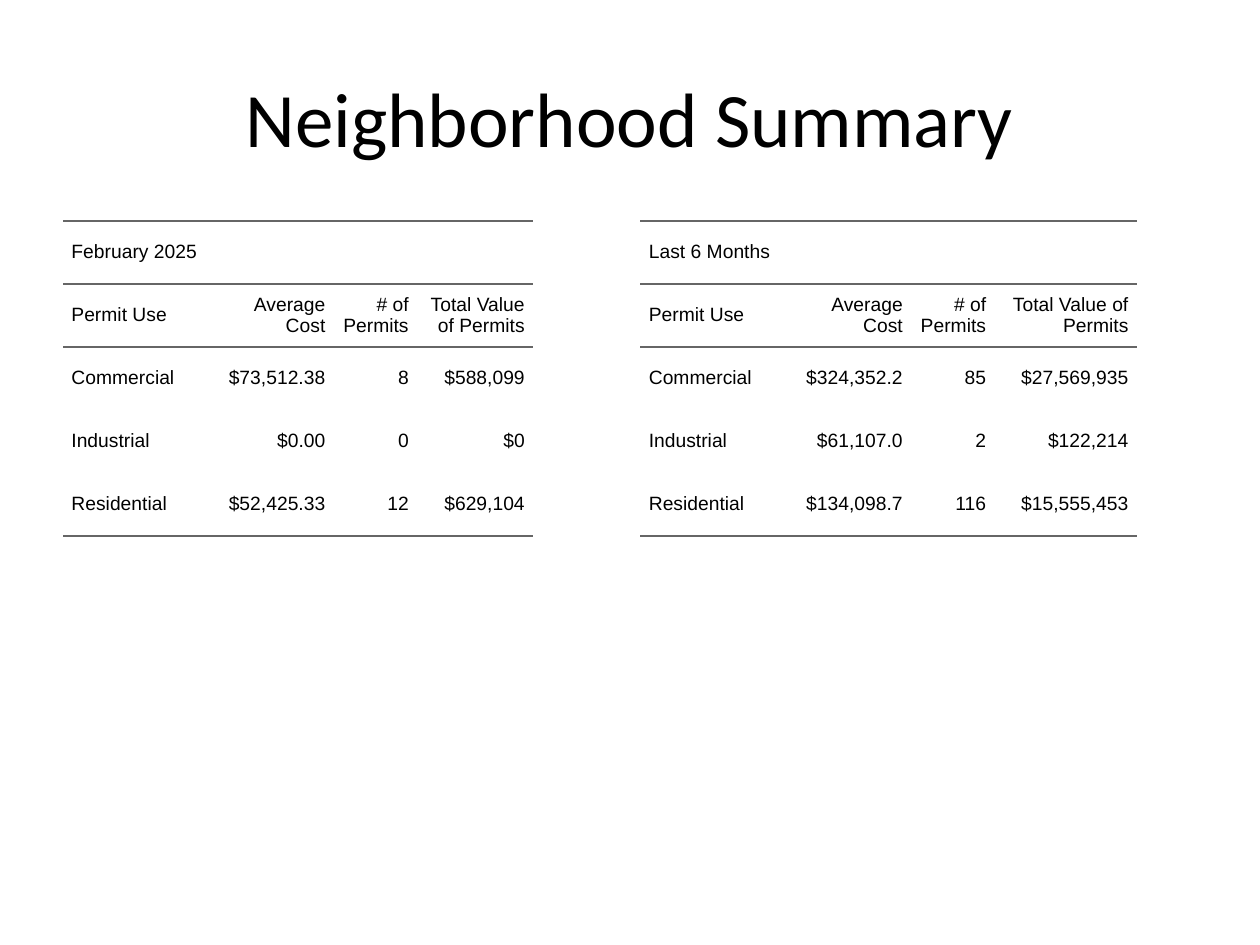
from dataclasses import dataclass
from typing import Any

from lxml.etree import SubElement
from pptx import Presentation
from pptx.dml.color import RGBColor
from pptx.enum.text import MSO_ANCHOR as Anchor, PP_ALIGN as Align
from pptx.oxml.ns import qn
from pptx.util import Cm, Pt

COLORS = {"text": "000000", "rule": "666666"}
PLAIN_STYLE = "{2D5ABB26-0587-4C30-8999-92F81FD0307C}"
HEADINGS = ("Permit Use", "Average Cost", "# of Permits", "Total Value of Permits")
TABLE_TOP, ROW_HEIGHT, CELL_INDENT = Cm(4.45), Cm(1.27), Cm(0.17)
CELL_FORMAT = {
    "vertical_anchor": Anchor.MIDDLE,
    "margin_left": 0,
    "margin_right": CELL_INDENT,
    "margin_top": 0,
    "margin_bottom": 0,
}
CELL_SPACING = {"space_before": Pt(5), "space_after": Pt(5)}
TITLE_FORMAT = {"word_wrap": True, "vertical_anchor": Anchor.MIDDLE}


@dataclass(frozen=True)
class PermitTable:
    left: float
    widths: tuple[float, ...]
    period: str
    records: tuple[tuple[str, ...], ...]


TABLES = (
    PermitTable(1.27, (2.79, 2.67, 1.68, 2.34), "February 2025", (
        ("Commercial", "$73,512.38", "8", "$588,099"),
        ("Industrial", "$0.00", "0", "$0"),
        ("Residential", "$52,425.33", "12", "$629,104"),
    )),
    PermitTable(12.91, (2.79, 2.67, 1.68, 2.87), "Last 6 Months", (
        ("Commercial", "$324,352.2", "85", "$27,569,935"),
        ("Industrial", "$61,107.0", "2", "$122,214"),
        ("Residential", "$134,098.7", "116", "$15,555,453"),
    )),
)


def apply_format(target: Any, values: dict[str, Any]) -> None:
    for name, value in values.items():
        setattr(target, name, value)


def write_text(para: Any, text: str, font: str, size: int, align: Align) -> None:
    para.alignment = align
    span = para.add_run()
    span.text = text
    apply_format(span.font, {"name": font, "size": Pt(size)})
    span.font.color.rgb = RGBColor.from_string(COLORS["text"])


def add_rule(cell: Any, edge: str) -> None:
    line = SubElement(cell._tc.get_or_add_tcPr(), qn(f"a:{edge}"), w=str(Pt(1.5)))
    fill = SubElement(line, qn("a:solidFill"))
    SubElement(fill, qn("a:srgbClr"), val=COLORS["rule"])


def fill_cell(cell: Any, text: str, align: Align, edges: list[str]) -> None:
    apply_format(cell, CELL_FORMAT)
    for edge in edges:
        add_rule(cell, edge)
    cell.fill.background()
    para = cell.text_frame.paragraphs[0]
    apply_format(para, CELL_SPACING)
    properties = para._p.get_or_add_pPr()
    properties.set("marL", str(CELL_INDENT))
    properties.set("indent", "0")
    if text:
        write_text(para, text, "Arial", 11, align)


def add_permit_table(page: Any, item: PermitTable) -> None:
    rows = ((item.period, "", "", ""), HEADINGS, *item.records)
    frame = page.shapes.add_table(
        len(rows), len(HEADINGS), Cm(item.left), TABLE_TOP,
        Cm(sum(item.widths)), ROW_HEIGHT * len(rows),
    )
    table = frame.table
    apply_format(table, {"first_row": False, "horz_banding": False})
    for style in table._tbl.iter(qn("a:tableStyleId")):
        style.text = PLAIN_STYLE
    for column, width in zip(table.columns, item.widths):
        column.width = Cm(width)
    table.cell(0, 0).merge(table.cell(0, len(HEADINGS) - 1))
    for i, texts in enumerate(rows):
        table.rows[i].height = ROW_HEIGHT
        top = ["lnT"] if i < 2 else []
        bottom = ["lnB"] if i < 2 or i == len(rows) - 1 else []
        for j, text in enumerate(texts):
            align = Align.RIGHT if j else Align.LEFT
            fill_cell(table.cell(i, j), text, align, top + bottom)


def add_title(page: Any, text: str) -> None:
    box = page.shapes.add_textbox(Cm(1.27), Cm(0.76), Cm(22.86), Cm(3.18))
    apply_format(box.text_frame, TITLE_FORMAT)
    write_text(box.text_frame.paragraphs[0], text, "Calibri", 44, Align.CENTER)


def main() -> None:
    """Build the neighborhood permit summary slide."""
    deck = Presentation()
    apply_format(deck, {"slide_width": Cm(25.4), "slide_height": Cm(19.05)})
    page = deck.slides.add_slide(deck.slide_layouts[6])
    for item in TABLES:
        add_permit_table(page, item)
    add_title(page, "Neighborhood Summary")
    deck.save("out.pptx")


if __name__ == "__main__":
    main()
